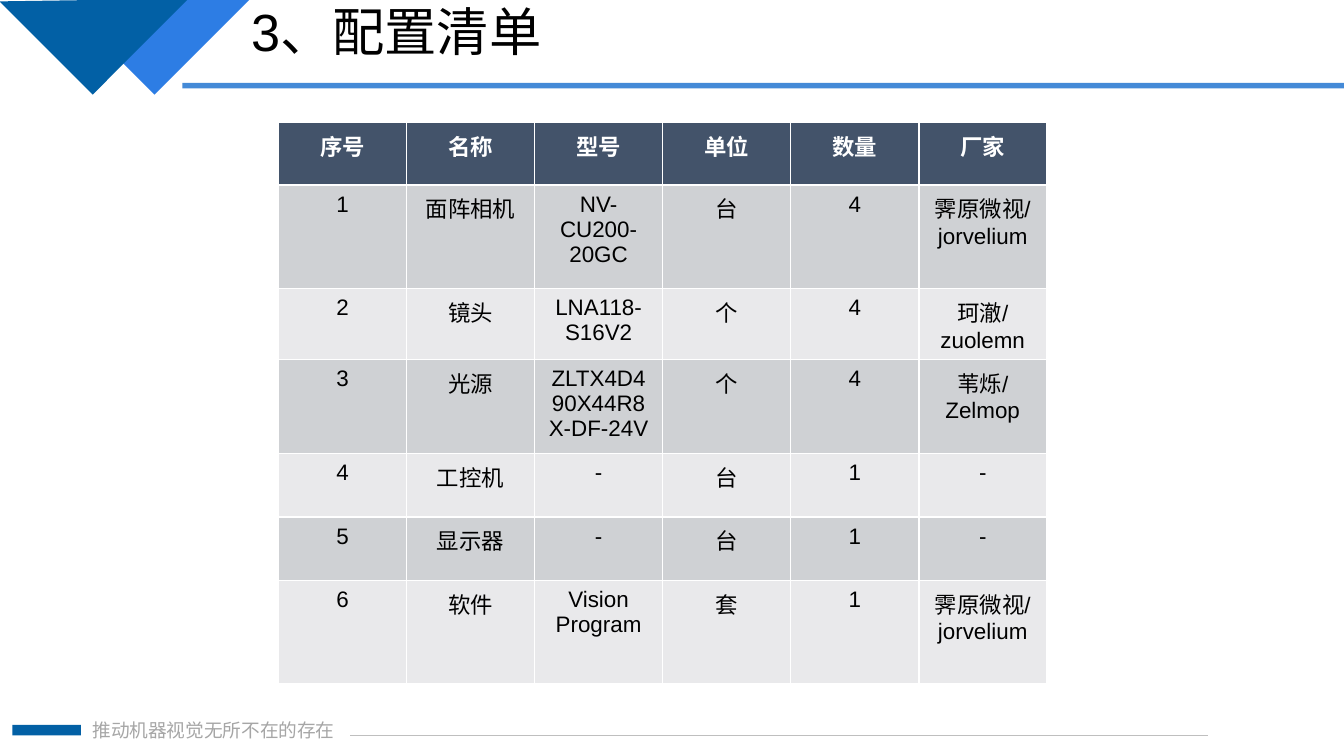
from pptx import Presentation
from pptx.dml.color import RGBColor
from pptx.enum.shapes import MSO_CONNECTOR as Conn, MSO_SHAPE as Shape
from pptx.enum.text import MSO_ANCHOR as Anchor, PP_ALIGN as Align
from pptx.oxml.ns import qn
from pptx.util import Pt
from lxml.etree import SubElement

WHITE = RGBColor(0xFF, 0xFF, 0xFF)
BLACK = RGBColor(0, 0, 0)
NAVY = RGBColor(0x02, 0x60, 0xA5)
BLUE = RGBColor(0x2D, 0x7D, 0xE4)
RULE = RGBColor(0x44, 0x8A, 0xD7)
SLATE = RGBColor(0x43, 0x53, 0x6A)
DARK = RGBColor(0xCF, 0xD1, 0xD4)
LIGHT = RGBColor(0xE9, 0xE9, 0xEB)
GREY = RGBColor(0xA6, 0xA6, 0xA6)
SILVER = RGBColor(0xBF, 0xBF, 0xBF)

deck = Presentation()
deck.slide_width, deck.slide_height = Pt(720), Pt(405)
slide = deck.slides.add_slide(deck.slide_layouts[5])
shapes = slide.shapes


def add_block(kind, left, top, width, height, color):
    block = shapes.add_shape(kind, Pt(left), Pt(top), Pt(width), Pt(height))
    block.shadow.inherit = False
    block.fill.solid()
    block.fill.fore_color.rgb = color
    block.line.fill.background()
    return block


def add_run(para, text, size, color, face="Arial", bold=False):
    run = para.add_run()
    run.text = text
    font = run.font
    font.size, font.name, font.bold = Pt(size), face, bold
    font.color.rgb = color


# Header rule and corner triangles
add_block(Shape.RECTANGLE, 97.8, 44.4, 622.2, 3, RULE)
for left, color in ((47.1, BLUE), (14, NAVY)):
    corner = add_block(Shape.RIGHT_TRIANGLE, left, -35.3, 72.7, 70.6, color)
    corner.rotation = 315

# Title
title = shapes.title
title.left, title.top, title.width, title.height = Pt(127.4), Pt(0), Pt(265), Pt(46)
frame = title.text_frame
frame.vertical_anchor = Anchor.TOP
para = frame.paragraphs[0]
para.alignment = Align.LEFT
para.line_spacing = 0.9
add_run(para, "3、配置清单", 28, BLACK)

# Footer
add_block(Shape.RECTANGLE, 6.6, 388.4, 36.8, 5.6, NAVY)
note = shapes.add_textbox(Pt(49.6), Pt(385), Pt(156), Pt(12.2))
frame = note.text_frame
frame.word_wrap = True
frame.vertical_anchor = Anchor.MIDDLE
frame.margin_left = frame.margin_top = frame.margin_right = frame.margin_bottom = 0
add_run(frame.paragraphs[0], "推动机器视觉无所不在的存在", 10, GREY, "Noto Sans CJK SC")
line = shapes.add_connector(Conn.STRAIGHT, Pt(187.7), Pt(394), Pt(647.2), Pt(394))
line.line.color.rgb = SILVER
line.line.width = Pt(0.5)
SubElement(line._element.spPr, qn("a:effectLst"))

# Parts table: row height, then cell texts
rows = [
    (33.5, "序号", "名称", "型号", "单位", "数量", "厂家"),
    (55.5, "1", "面阵相机", "NV-CU200-20GC", "台", "4", "霁原微视/jorvelium"),
    (38, "2", "镜头", "LNA118-S16V2", "个", "4", "珂澈/zuolemn"),
    (47.5, "3", "光源", "ZLTX4D490X44R8X-DF-24V", "个", "4", "苇烁/Zelmop"),
    (34, "4", "工控机", "-", "台", "1", "-"),
    (34, "5", "显示器", "-", "台", "1", "-"),
    (55.5, "6", "软件", "Vision Program", "套", "1", "霁原微视/jorvelium"),
]
table = shapes.add_table(7, 6, Pt(149.2), Pt(65.6), Pt(411.6), Pt(298)).table
for col in table.columns:
    col.width = Pt(68.6)
for r, (height, *texts) in enumerate(rows):
    table.rows[r].height = Pt(height)
    head = r == 0
    shade = SLATE if head else DARK if r % 2 else LIGHT
    for c, text in enumerate(texts):
        cell = table.cell(r, c)
        props = cell._tc.get_or_add_tcPr()
        for side in "LRTB":
            edge = SubElement(props, qn("a:ln" + side), w=str(Pt(1)))
            fill = SubElement(edge, qn("a:solidFill"))
            SubElement(fill, qn("a:srgbClr"), val=str(WHITE))
        cell.fill.solid()
        cell.fill.fore_color.rgb = shade
        para = cell.text_frame.paragraphs[0]
        para.alignment = Align.CENTER
        add_run(para, text, 12, WHITE if head else BLACK, bold=head)

deck.save("out.pptx")
